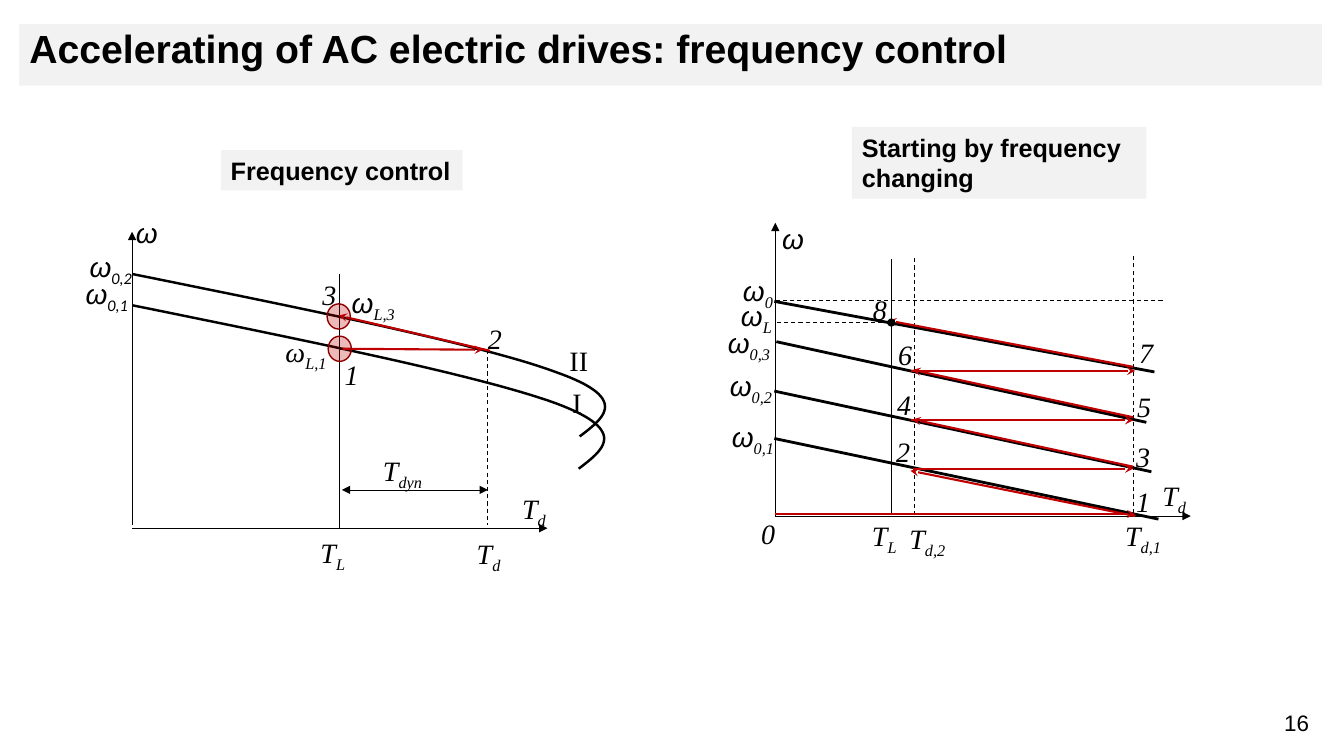
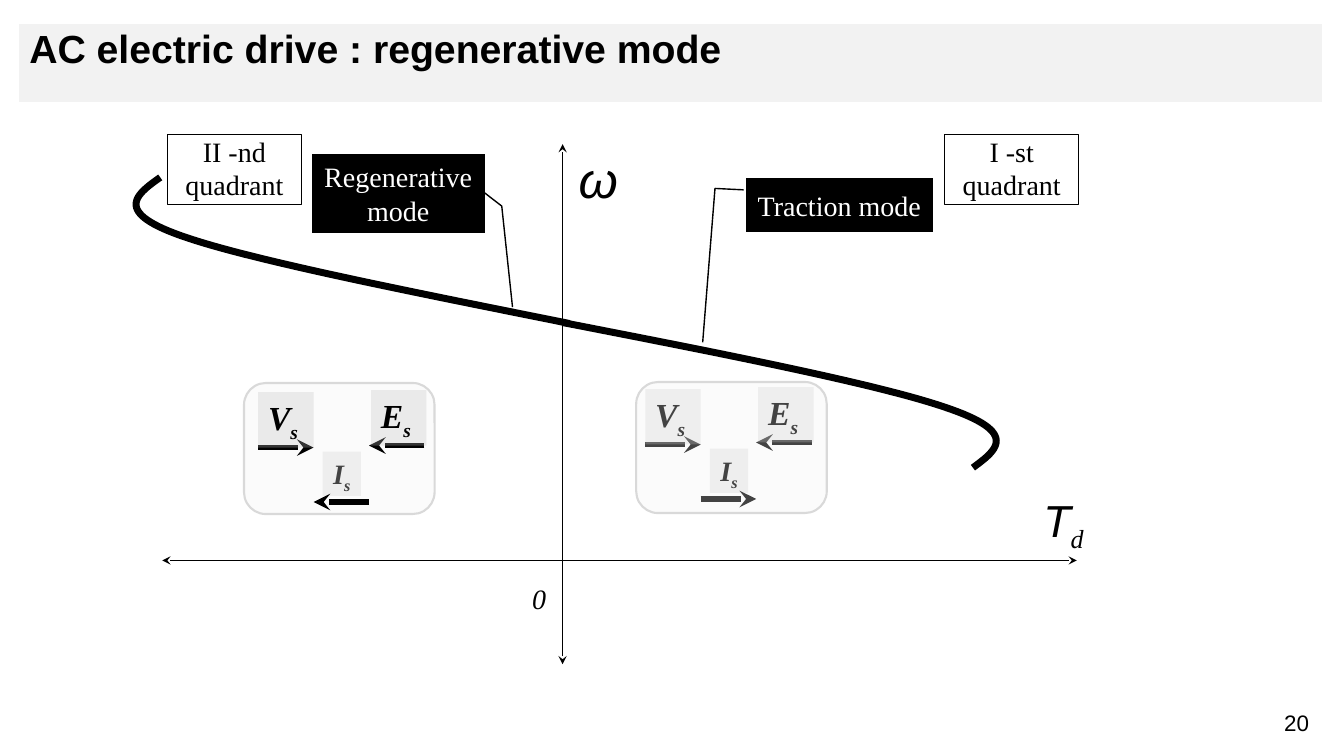
from lxml import etree
from pptx import Presentation
from pptx.dml.color import RGBColor
from pptx.enum.dml import MSO_LINE
from pptx.enum.shapes import MSO_CONNECTOR, MSO_SHAPE as SHAPE
from pptx.enum.text import MSO_ANCHOR as ANCHOR, MSO_AUTO_SIZE, PP_ALIGN as ALIGN
from pptx.oxml.ns import qn
from pptx.util import Pt

PX = 9144  # 100 px to the inch
SERIF, SANS, SUB_SANS = "Times New Roman", "Arial", "Calibri"
COLORS = {"ink": "000000", "white": "FFFFFF", "band": "F2F2F2", "red": "C00000",
          "dark_red": "8E0000", "chip": "BFBFBF", "edge": "D9D9D9"}

# name: color, width, dashed, arrow at start, arrow at end
STROKES = {
    "thin": ("ink", 0.75, False, None, None),
    "axis": ("ink", 0.75, False, None, "triangle"),
    "span": ("ink", 0.5, False, "triangle", "triangle"),
    "dash": ("ink", 0.75, True, None, None),
    "slope": ("ink", 2, False, None, None),
    "path": ("red", 1.5, False, None, "stealth"),
    "cross": ("ink", 1.25, False, "stealth", "stealth"),
    "phasor": ("ink", 4, False, None, "stealth"),
}

# Slide 1: acceleration
START_TITLE = ("Accelerating of AC electric drives: frequency control", 61, "16")
HEADINGS = [("Frequency control", 219, 149, 240, 40, False),
            ("Starting by frequency changing", 845, 126, 292, 71, True)]
START_CURVES = [
    [(132, 272), (305, 307), (478, 342), (551, 369), (625, 395), (600, 414), (575, 433)],
    [(132, 303), (304, 338), (477, 373), (551, 400), (624, 427), (599, 446), (574, 465)],
]
START_LINES = [
    ("axis", [(131, 521, 131, 230), (131, 524, 543, 524),
              (769, 512, 769, 221), (769, 512, 1181, 512)]),
    ("thin", [(337, 272, 337, 524), (884, 257, 884, 509)]),
    ("span", [(339, 486, 484, 486)]),
    ("dash", [(484, 347, 484, 521), (482, 347, 336, 347), (907, 511, 907, 255),
              (1124, 509, 1124, 253), (1153, 298, 770, 298), (882, 320, 768, 320)]),
    ("slope", [(768, 299, 1145, 369), (770, 339, 1137, 419),
               (768, 388, 1142, 468), (768, 435, 1149, 515)]),
    ("path", [(340, 346, 479, 347), (486, 348, 336, 313),
              (769, 510, 1126, 510), (1126, 512, 903, 467),
              (906, 465, 1124, 465), (1124, 463, 905, 416),
              (904, 417, 1124, 417), (1124, 414, 905, 367),
              (904, 368, 1126, 368), (1124, 364, 881, 318)]),
]
# center x, center y, width, height, fill, opacity, edge, edge width
POINTS = [(336, 314, 23, 25, "red", 27, "dark_red", 1),
          (337, 346, 23, 25, "red", 27, "dark_red", 1),
          (884, 320, 7, 7, "ink", 100, "ink", 0.75)]
# left, top, width, symbol, subscript
START_LABELS = [
    (125, 204, 75, "ω", ""), (339, 273, 75, "ω", "L,3"),
    (508, 477, 56, "T", "d"), (463, 522, 75, "T", "d"),
    (370, 439, 75, "T", "dyn"), (308, 521, 75, "T", "L"),
    (474, 309, 56, "2", ""), (332, 345, 56, "1", ""), (310, 265, 38, "3", ""),
    (766, 210, 75, "ω", ""), (727, 261, 75, "ω", "0"), (725, 286, 75, "ω", "L"),
    (712, 312, 75, "ω", "0,3"), (714, 355, 75, "ω", "0,2"), (716, 406, 75, "ω", "0,1"),
    (1143, 464, 56, "T", "d"), (1106, 504, 75, "T", "d,1"),
    (855, 504, 75, "T", "L"), (892, 507, 75, "T", "d,2"), (745, 502, 38, "0", ""),
    (1117, 471, 38, "1", ""), (879, 421, 56, "2", ""), (1117, 426, 56, "3", ""),
    (880, 374, 56, "4", ""), (1118, 376, 56, "5", ""), (881, 325, 56, "6", ""),
    (1120, 323, 56, "7", ""), (856, 280, 56, "8", ""),
]
SANS_LABELS = [(79, 237, 75, "ω", "0,2"), (75, 264, 75, "ω", "0,1")]
CURVE_NAMES = [(555, 331, 57, "II", ""), (558, 372, 57, "I", "")]

# Slide 2: regenerative mode
REGEN_TITLE = ("AC electric drive : regenerative mode", 77, "20")
REGEN_CURVES = [
    [(558, 320), (717, 351), (876, 382), (943, 406), (1011, 430), (988, 447), (965, 464)],
    [(565, 321), (406, 289), (248, 258), (180, 234), (112, 210), (135, 193), (159, 176)],
]
REGEN_AXES = [(558, 659, 558, 143), (161, 556, 1068, 556)]
QUADRANTS = [("I -st\nquadrant", 937), ("II -nd\nquadrant", 166)]
# text, box, leader adjustments, mirrored
CALLOUTS = [
    ("Traction mode", (740, 177, 185, 53),
     (0.215, -0.013, 0.188, -0.167, 3.069, -0.233), False),
    ("Regenerative\nmode", (309, 153, 172, 78),
     (0.48, 0.009, 0.66, -0.097, 1.944, -0.159), True),
]
# phasor origin, panel corner, current reversed, panel drawn over everything
PANELS = [((640, 384), (631, 379), False, True), ((256, 387), (242, 380), True, False)]
PHASOR_CHIPS = [("V", 0, 2), ("Е", 112, 0)]
PHASOR_ARROWS = [(0, 57, 55, 57), (165, 55, 110, 55)]
CURRENT_ARROW = (55, 111, 110, 111)


def px(*values):
    return [v * PX for v in values]


def rgb(name):
    return RGBColor.from_string(COLORS[name])


def paint(shape, fill=None, opacity=100, line=None, width=0.75):
    if fill:
        shape.fill.solid()
        shape.fill.fore_color.rgb = rgb(fill)
        if opacity < 100:
            color = shape.fill._xPr.find(qn("a:solidFill"))[0]
            etree.SubElement(color, qn("a:alpha"), val=str(opacity * 1000))
    else:
        shape.fill.background()
    if line:
        shape.line.color.rgb = rgb(line)
        shape.line.width = Pt(width)
    else:
        shape.line.fill.background()


def add_box(s, kind, x, y, w, h, **look):
    shape = s.shapes.add_shape(kind, *px(x, y, w, h))
    shape.shadow.inherit = False
    paint(shape, **look)
    return shape


def write(shape, text, size, font=SERIF, color="ink", bold=False, italic=False,
          align=ALIGN.LEFT, anchor=ANCHOR.TOP, wrap=True, spacing=None, inset=None):
    tf = shape.text_frame
    tf.text = text
    tf.word_wrap = wrap
    tf.auto_size = MSO_AUTO_SIZE.NONE
    tf.vertical_anchor = anchor
    if inset is not None:
        tf.margin_left = tf.margin_right = tf.margin_top = tf.margin_bottom = inset
    for p in tf.paragraphs:
        p.alignment = align
        if spacing:
            p.line_spacing = spacing
        f = p.font
        f.name, f.size, f.bold, f.italic = font, Pt(size), bold, italic
        f.color.rgb = rgb(color)
    return tf.paragraphs[0]


def add_subscript(p, text, font=SERIF):
    if text:
        r = p.add_run()
        r.text = text
        r.font.name = font
        r._r.get_or_add_rPr().set("baseline", "-25000")


def add_label(s, x, y, w, symbol, sub, h=58, size=20, font=None, sub_font=SERIF,
              italic=True, **style):
    box = s.shapes.add_textbox(*px(x, y, w, h))
    p = write(box, symbol, size, italic=italic, spacing=1.15, **style)
    p.runs[0].font.name = font or (SANS if symbol == "ω" else SERIF)
    add_subscript(p, sub, sub_font)


def add_line(s, stroke, ends):
    color, width, dashed, head, tail = STROKES[stroke]
    c = s.shapes.add_connector(MSO_CONNECTOR.STRAIGHT, *px(*ends))
    c.line.color.rgb = rgb(color)
    c.line.width = Pt(width)
    if dashed:
        c.line.dash_style = MSO_LINE.DASH
    ln = c.line._get_or_add_ln()
    for tag, arrow in (("a:headEnd", head), ("a:tailEnd", tail)):
        if arrow:
            etree.SubElement(ln, qn(tag), type=arrow)
    etree.SubElement(c.element.spPr, qn("a:effectLst"))


def add_curve(s, knots, width, steps=30):
    """Draw joined cubic Bezier pieces as one smooth outline."""
    points = []
    for k in range(0, len(knots) - 1, 3):
        piece = knots[k:k + 4]
        for i in range(1, steps + 1):
            t = i / steps
            weights = ((1 - t) ** 3, 3 * t * (1 - t) ** 2, 3 * t * t * (1 - t), t ** 3)
            points.append(tuple(round(PX * sum(w * pt[a] for w, pt in zip(weights, piece)))
                                for a in (0, 1)))
    builder = s.shapes.build_freeform(*px(*knots[0]))
    builder.add_line_segments(points, close=False)
    curve = builder.convert_to_shape()
    curve.shadow.inherit = False
    paint(curve, line="ink", width=width)


def add_slide(prs, title, band_height, number):
    s = prs.slides.add_slide(prs.slide_layouts[5])
    band = s.shapes.title
    band.left, band.top, band.width, band.height = px(19, 24, 1292, band_height)
    paint(band, fill="band")
    write(band, title, 28, SANS, bold=True, spacing=0.9)
    write(s.shapes.add_textbox(*px(1254, 699, 64, 37)), number, 16, SANS,
          align=ALIGN.CENTER)
    return s


def add_chip(s, symbol, x, y, w, h, size, **style):
    chip = add_box(s, SHAPE.RECTANGLE, x, y, w, h, fill="chip", opacity=28)
    p = write(chip, symbol, size, bold=True, italic=True, **style)
    add_subscript(p, "s")


def add_phasors(s, origin, corner, reversed_current, covered):
    ox, oy = origin

    def add_panel():
        panel = add_box(s, SHAPE.ROUNDED_RECTANGLE, *corner, 189, 130,
                        fill="band", opacity=28, line="edge", width=1.5)
        panel.text_frame.word_wrap = True

    add_chip(s, "I", ox + 64, oy + 61, 38, 44, 20, align=ALIGN.CENTER, wrap=False)
    if not covered:
        add_panel()
    x1, y1, x2, y2 = CURRENT_ARROW
    current = (x2, y2, x1, y1) if reversed_current else CURRENT_ARROW
    for x1, y1, x2, y2 in PHASOR_ARROWS + [current]:
        add_line(s, "phasor", (ox + x1, oy + y1, ox + x2, oy + y2))
    for symbol, dx, dy in PHASOR_CHIPS:
        add_chip(s, symbol, ox + dx, oy + dy, 55, 55, 24)
    if covered:
        add_panel()


def build_start(prs):
    s = add_slide(prs, *START_TITLE)
    for text, x, y, w, h, wrap in HEADINGS:
        box = add_box(s, SHAPE.RECTANGLE, x, y, w, h, fill="band")
        write(box, text, 18, SANS, bold=True, wrap=wrap)
    for knots in START_CURVES:
        add_curve(s, knots, 1.75)
    for stroke, lines in START_LINES:
        for ends in lines:
            add_line(s, stroke, ends)
    for cx, cy, w, h, fill, opacity, line, width in POINTS:
        add_box(s, SHAPE.OVAL, cx - w / 2, cy - h / 2, w, h,
                fill=fill, opacity=opacity, line=line, width=width)
    for label in START_LABELS:
        add_label(s, *label)
    for label in SANS_LABELS:
        add_label(s, *label, sub_font=SUB_SANS)
    for label in CURVE_NAMES:
        add_label(s, *label, italic=False)
    add_label(s, 279, 326, 49, "ω", "L,1", h=37, font=SERIF, align=ALIGN.CENTER, inset=0)


def build_regen(prs):
    s = add_slide(prs, *REGEN_TITLE)
    for ends in REGEN_AXES:
        add_line(s, "cross", ends)
    for text, x in QUADRANTS:
        box = add_box(s, SHAPE.RECTANGLE, x, 133, 133, 70, line="ink")
        write(box, text, 20, align=ALIGN.CENTER, inset=0)
    for text, place, adjustments, mirrored in CALLOUTS:
        box = add_box(s, SHAPE.LINE_CALLOUT_2_NO_BORDER, *place,
                      fill="ink", line="ink", width=1)
        for i, value in enumerate(adjustments):
            box.adjustments[i] = value
        if mirrored:
            box.element.spPr.xfrm.set("flipH", "1")
        write(box, text, 20, color="white", align=ALIGN.CENTER, anchor=ANCHOR.MIDDLE)
    for panel in PANELS:
        add_phasors(s, *panel)
    write(s.shapes.add_textbox(*px(518, 572, 45, 53)), "0", 20, italic=True, wrap=False)
    add_label(s, 564, 133, 81, "ω", "", h=63, size=36)
    add_label(s, 1025, 475, 106, "Τ", "d", h=78, size=32, font=SANS)
    for knots in REGEN_CURVES:
        add_curve(s, knots, 5)


def main():
    prs = Presentation()
    prs.slide_width, prs.slide_height = px(1333, 750)
    build_start(prs)
    build_regen(prs)
    prs.save("out.pptx")


if __name__ == "__main__":
    main()
